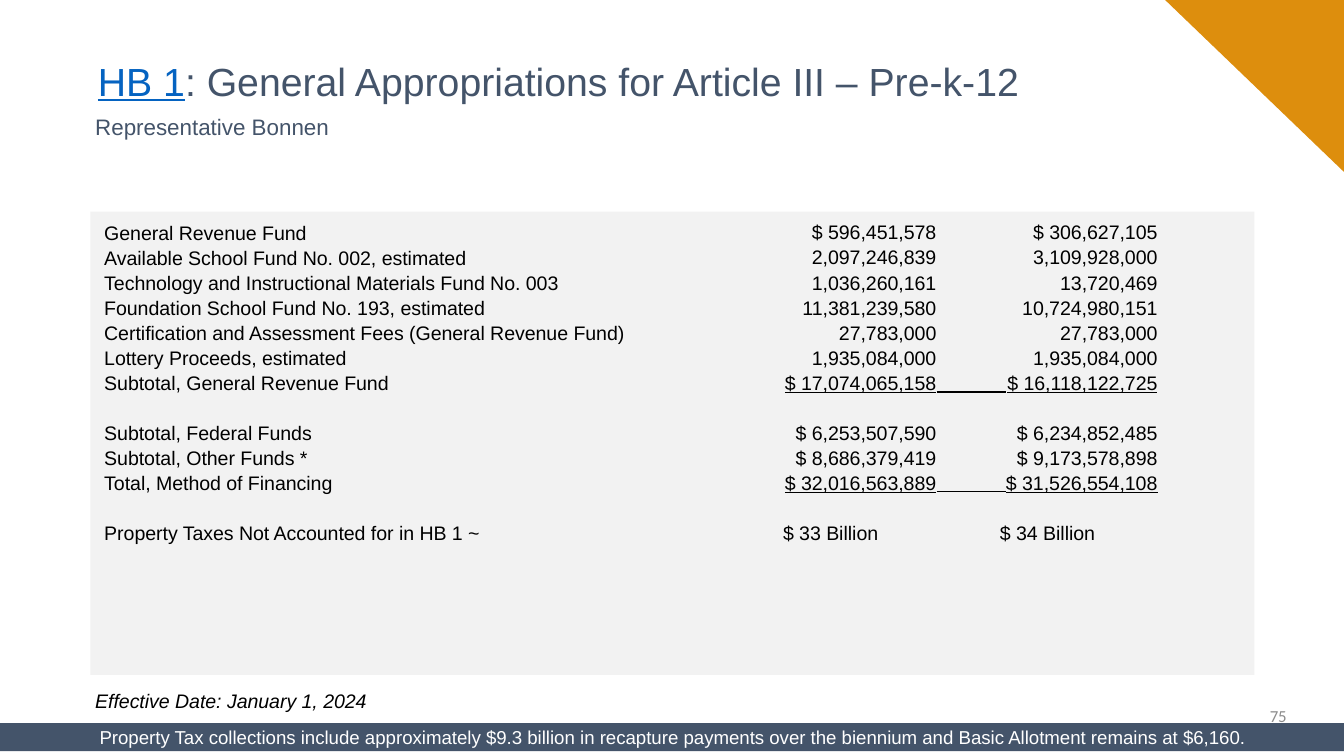
from lxml import etree
from pptx import Presentation, util as u
from pptx.dml.color import RGBColor
from pptx.enum import shapes, text
from pptx.oxml.ns import qn

HUES = {"slate": "44546A", "gold": "DD8E0D", "pale": "F2F2F2", "link": "0563C1",
        "black": "000000", "white": "FFFFFF", "gray": "8C8C8C"}
MID, TOP = text.MSO_ANCHOR.MIDDLE, text.MSO_ANCHOR.TOP
LEFT, CENTER, RIGHT = text.PP_ALIGN.LEFT, text.PP_ALIGN.CENTER, text.PP_ALIGN.RIGHT
FUNDS = [
    ("General Revenue Fund", "$ 596,451,578", "$ 306,627,105"),
    ("Available School Fund No. 002, estimated", "2,097,246,839", "3,109,928,000"),
    ("Technology and Instructional Materials Fund No. 003", "1,036,260,161", "13,720,469"),
    ("Foundation School Fund No. 193, estimated", "11,381,239,580", "10,724,980,151"),
    ("Certification and Assessment Fees (General Revenue Fund)", "27,783,000", "27,783,000"),
    ("Lottery Proceeds, estimated", "1,935,084,000", "1,935,084,000"),
    ("Subtotal, General Revenue Fund", "$ 17,074,065,158", "$ 16,118,122,725"),
    ("Subtotal, Federal Funds", "$ 6,253,507,590", "$ 6,234,852,485"),
    ("Subtotal, Other Funds *", "$ 8,686,379,419", "$ 9,173,578,898"),
    ("Total, Method of Financing", "$ 32,016,563,889", "$ 31,526,554,108"),
    ("Property Taxes Not Accounted for in HB 1 ~", "$ 33 Billion", "$ 34 Billion"),
]
SUMS = (6, 9)
BREAKS = (7, 10)
GAP = 13.3


class Deck:
    """Hold the style and the current slide."""

    def __init__(self):
        self.prs = Presentation()
        self.prs.slide_width, self.prs.slide_height = u.Cm(25.4), u.Cm(14.29)
        self.slide = self.prs.slides.add_slide(self.prs.slide_layouts[1])

    def place(self, item, box):
        names = ("left", "top", "width", "height")
        for name, size in zip(names, box):
            setattr(item, name, u.Cm(size))

    def frame(self, item, anchor=MID, inset=0.25):
        form = {"word_wrap": True, "auto_size": text.MSO_AUTO_SIZE.NONE,
                "vertical_anchor": anchor, "margin_left": u.Cm(inset),
                "margin_right": u.Cm(inset)}
        for name, value in form.items():
            setattr(item.text_frame, name, value)
        return item.text_frame

    def para(self, para, **form):
        for name, value in form.items():
            setattr(para, name, value)
        return para

    def run(self, para, words, hue, size, face="Arial", **form):
        run = para.add_run()
        run.text = words
        form.update(name=face, size=u.Pt(size))
        for name, value in form.items():
            setattr(run.font, name, value)
        run.font.color.rgb = RGBColor.from_string(HUES[hue])

    def shape(self, kind, box, hue, turn=0):
        item = self.slide.shapes.add_shape(kind, *map(u.Cm, box))
        item.shadow.inherit = False
        item.fill.solid()
        item.fill.fore_color.rgb = RGBColor.from_string(HUES[hue])
        item.line.fill.background()
        item.rotation = turn
        return item

    def rule(self, left, right, top):
        ends = map(u.Cm, (left, top, right, top))
        item = self.slide.shapes.add_connector(shapes.MSO_CONNECTOR.STRAIGHT, *ends)
        item.line.width = u.Pt(0.75)
        item.line.color.rgb = RGBColor.from_string(HUES["black"])
        etree.SubElement(item._element.spPr, qn("a:effectLst"))

    def label(self, box, words, hue, size, align=LEFT, inset=0.2, **font):
        item = self.slide.shapes.add_textbox(*map(u.Cm, box))
        para = self.para(self.frame(item, inset=inset).paragraphs[0], alignment=align)
        self.run(para, words, hue, size, **font)

    def title(self, box, parts):
        item = self.slide.shapes.title
        self.place(item, box)
        para = self.para(self.frame(item).paragraphs[0], alignment=LEFT, line_spacing=0.9)
        for words, hue, line in parts:
            self.run(para, words, hue, 21, underline=line)

    def plain(self, para):
        prop = para._p.get_or_add_pPr()
        prop.set("marL", "0")
        prop.set("indent", "0")
        etree.SubElement(prop, qn("a:buNone"))

    def fill(self, frame, rows, align, sums=()):
        for i, words in enumerate(rows):
            para = frame.paragraphs[0] if i == 0 else frame.add_paragraph()
            self.para(para, line_spacing=0.9, space_after=u.Pt(2.1),
                      space_before=u.Pt(GAP if i in BREAKS else 0),
                      alignment=LEFT if i == len(rows) - 1 else align)
            self.plain(para)
            self.run(para, words, "black", 10.5, underline=i in sums)

    def names(self, box, rows):
        item = self.slide.placeholders[1]
        self.place(item, box)
        self.fill(self.frame(item, TOP), rows, LEFT)

    def sums(self, box, rows):
        item = self.slide.shapes.add_textbox(*map(u.Cm, box))
        self.fill(self.frame(item, TOP, 0), rows, RIGHT, SUMS)

    def back(self, item):
        tree = self.slide.shapes._spTree
        tree.remove(item._element)
        tree.insert(2, item._element)


def main():
    deck = Deck()
    kinds = shapes.MSO_SHAPE
    deck.back(deck.shape(kinds.RECTANGLE, (1.71, 4, 22, 8.76), "pale"))
    deck.title((1.6, 0.76, 22.2, 1.63), [
        ("HB 1", "link", True),
        (": General Appropriations for Article III – Pre-k-12", "slate", False)])
    names, first, second = zip(*FUNDS)
    deck.names((1.72, 4.09, 21.9, 8.66), names)
    deck.sums((14.8, 4.09, 2.9, 8.66), first)
    deck.sums((18.9, 4.09, 2.98, 8.66), second)
    for top in (7.41, 9.29):
        deck.rule(17.7, 19.02, top)
    deck.label((18.85, 13.16, 5.72, 0.76), "75", "gray", 9, RIGHT, 0.25, face="Calibri")
    deck.label((1.6, 13.01, 21.9, 0.48), "Effective Date: January 1, 2024", "black", 10.5,
               italic=True)
    deck.label((1.6, 2.14, 19.48, 0.51), "Representative Bonnen", "slate", 12)
    deck.shape(kinds.RIGHT_TRIANGLE, (22.02, 0, 3.38, 3.25), "gold", 180)
    band = deck.shape(kinds.RECTANGLE, (0, 13.67, 25.4, 0.53), "slate")
    para = deck.para(deck.frame(band).paragraphs[0], alignment=CENTER)
    deck.run(para, "Property Tax collections include approximately $9.3 billion in recapture "
             "payments over the biennium and Basic Allotment remains at $6,160.", "white", 10)
    deck.prs.save("out.pptx")


if __name__ == "__main__":
    main()
